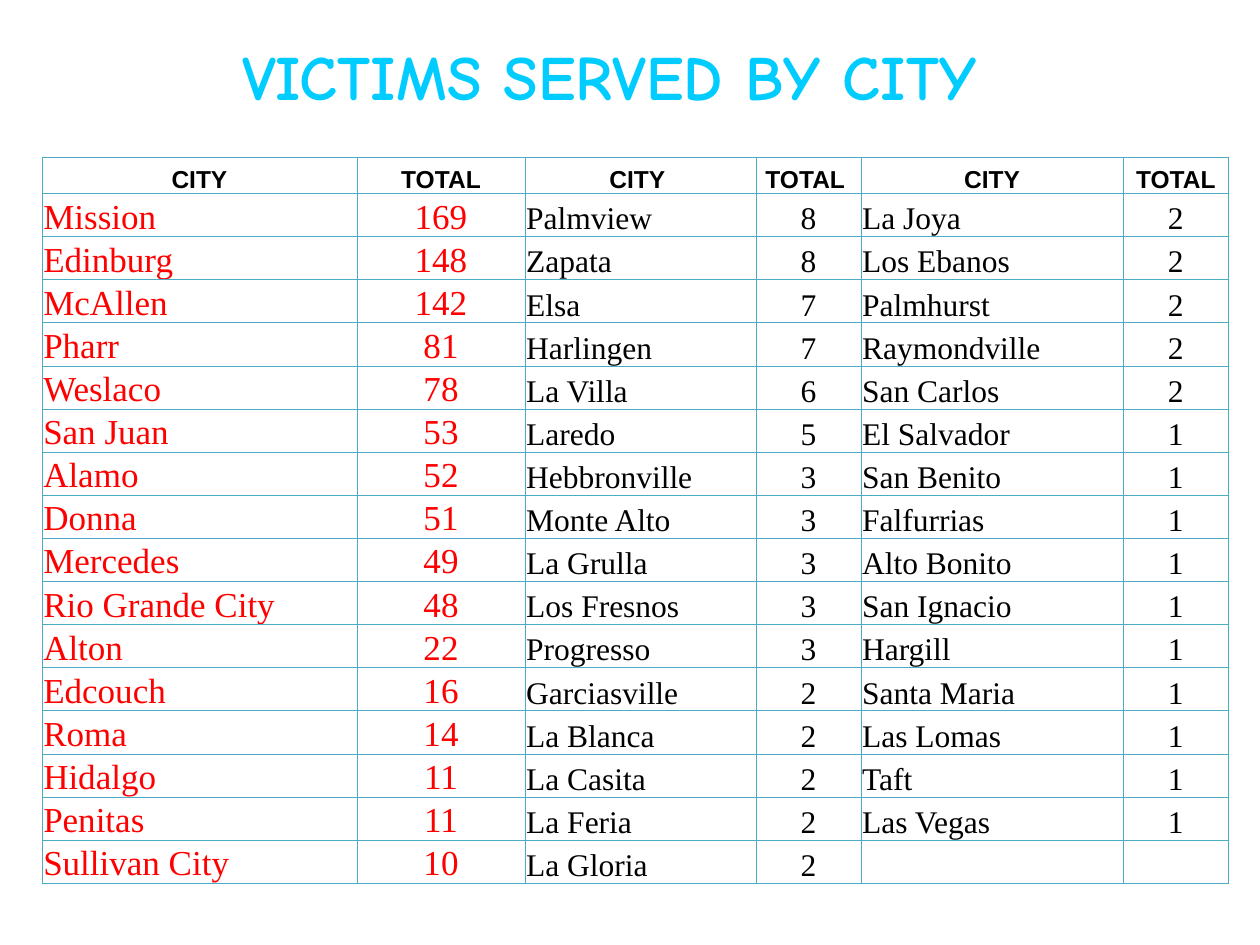
"""Build the slide of victims served by city as one three-part table."""
import lxml.etree
import pptx
import pptx.dml.color
import pptx.enum.text
import pptx.oxml.ns
import pptx.util

Pt = pptx.util.Pt
ALIGN = pptx.enum.text.PP_ALIGN
ANCHOR = pptx.enum.text.MSO_ANCHOR
HUES = {"title": "00CCFF", "top": "FF0000", "text": "000000",
        "line": "4BACC6", "fill": "FFFFFF"}
WIDTHS = [180, 96, 132, 60, 150, 60]
HEAD = ["CITY", "TOTAL", "CITY ", "TOTAL ", "CITY", "TOTAL"]
HEAD_H, ROW_H = 20.6, 24.64
PARTS = [
    [("Mission", 169), ("Edinburg", 148), ("McAllen", 142), ("Pharr", 81),
     ("Weslaco", 78), ("San Juan", 53), ("Alamo", 52), ("Donna", 51),
     ("Mercedes", 49), ("Rio Grande City", 48), ("Alton", 22),
     ("Edcouch", 16), ("Roma", 14), ("Hidalgo", 11), ("Penitas", 11),
     ("Sullivan City", 10)],
    [("Palmview", 8), ("Zapata", 8), ("Elsa", 7), ("Harlingen", 7),
     ("La Villa", 6), ("Laredo", 5), ("Hebbronville", 3), ("Monte Alto", 3),
     ("La Grulla", 3), ("Los Fresnos", 3), ("Progresso", 3),
     ("Garciasville", 2), ("La Blanca", 2), ("La Casita", 2),
     ("La Feria", 2), ("La Gloria", 2)],
    [("La Joya", 2), ("Los Ebanos", 2), ("Palmhurst", 2),
     ("Raymondville", 2), ("San Carlos", 2), ("El Salvador", 1),
     ("San Benito", 1), ("Falfurrias", 1), ("Alto Bonito", 1),
     ("San Ignacio", 1), ("Hargill", 1), ("Santa Maria", 1),
     ("Las Lomas", 1), ("Taft", 1), ("Las Vegas", 1), ("", "")],
]


def color(name):
    return pptx.dml.color.RGBColor.from_string(HUES[name])


def write(frame, text, size=18, font="Times New Roman", hue="text",
          bold=False, align=ALIGN.CENTER):
    para = frame.paragraphs[0]
    para.alignment = align
    face = para.font
    if text:
        run = para.add_run()
        run.text = text
        face = run.font
    face.size, face.name, face.bold = Pt(size), font, bold
    face.color.rgb = color(hue)


def edge(cell, side, width):
    qn = pptx.oxml.ns.qn
    props = cell._tc.get_or_add_tcPr()
    line = lxml.etree.SubElement(props, qn("a:ln" + side), w=str(Pt(width)))
    fill = lxml.etree.SubElement(line, qn("a:solidFill"))
    lxml.etree.SubElement(fill, qn("a:srgbClr"), val=HUES["line"])


def style(cell, head, first):
    cell.margin_left = cell.margin_right = cell.margin_top = Pt(0.72)
    cell.margin_bottom = Pt(0)
    cell.vertical_anchor = ANCHOR.BOTTOM
    for side, width in zip("LRTB", (0.5, 0.5, 1 if first else 0.5,
                                    1 if head else 0.5)):
        edge(cell, side, width)
    if head:
        cell.fill.background()
    else:
        cell.fill.solid()
        cell.fill.fore_color.rgb = color("fill")


def add_title(slide, text):
    title = slide.shapes.title
    title.left, title.top = Pt(24), Pt(18)
    title.width, title.height = Pt(648), Pt(51)
    title.text_frame.word_wrap = True
    title.text_frame.vertical_anchor = ANCHOR.TOP
    write(title.text_frame, text, size=36, font="Comic Neue", hue="title",
          bold=True)


def add_grid(slide):
    rows = [[str(item) for pair in line for item in pair]
            for line in zip(*PARTS)]
    count = len(rows) + 1
    frame = slide.shapes.add_table(
        count, len(WIDTHS), Pt(24), Pt(90), Pt(sum(WIDTHS)),
        Pt(HEAD_H + ROW_H * len(rows)))
    grid = frame.table
    grid.first_row = grid.horz_banding = False
    for col, width in zip(grid.columns, WIDTHS):
        col.width = Pt(width)
    for r, texts in enumerate([HEAD] + rows):
        grid.rows[r].height = Pt(ROW_H if r else HEAD_H)
        for c, text in enumerate(texts):
            cell = grid.cell(r, c)
            style(cell, r == 0, r == 1)
            if r == 0:
                look = dict(size=14, font="Arial", bold=True)
            else:
                look = dict(size=20, hue="top") if c < 2 else {}
                look["align"] = ALIGN.CENTER if c % 2 else ALIGN.LEFT
            write(cell.text_frame, text, **look)


def main():
    deck = pptx.Presentation()
    deck.slide_width, deck.slide_height = Pt(720), Pt(540)
    slide = deck.slides.add_slide(deck.slide_layouts[5])
    add_title(slide, "VICTIMS SERVED BY CITY")
    add_grid(slide)
    deck.save("out.pptx")


if __name__ == "__main__":
    main()
